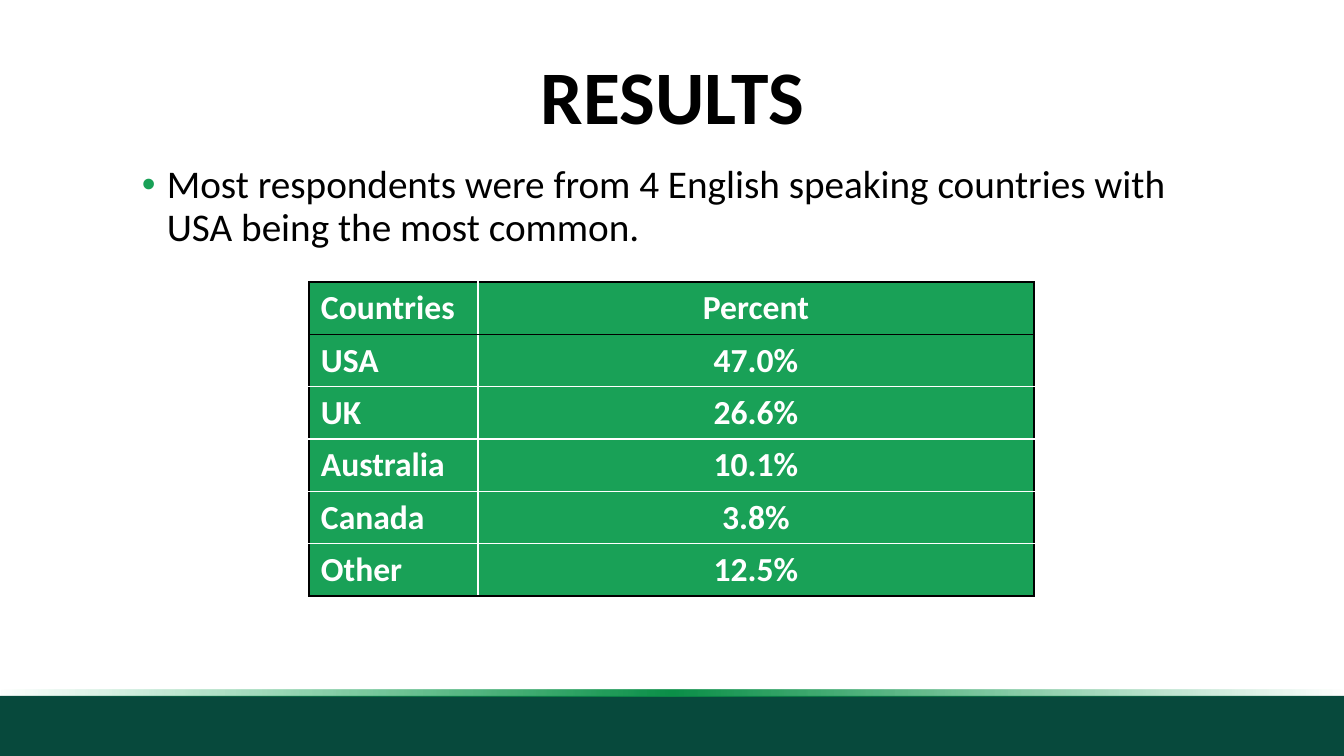
from dataclasses import dataclass

from lxml.etree import SubElement
from pptx import Presentation
from pptx.dml.color import RGBColor
from pptx.enum.shapes import MSO_SHAPE as Shape
from pptx.enum.text import MSO_ANCHOR as Anchor, PP_ALIGN as Align
from pptx.oxml.ns import qn
from pptx.util import Pt

EMU_PER_PX = 914400 / 100.8


def px(length):
    return round(length * EMU_PER_PX)


@dataclass(frozen=True)
class Theme:
    font: str = "Calibri"
    ink: str = "000000"
    paper: str = "FFFFFF"
    green: str = "19A157"
    footer: str = "07493C"
    glow: tuple = ((0, "0D9D4F", 0), (50, "0C9049", 100), (100, "0FAB56", 0))
    title_size: int = 54
    body_size: int = 28
    table_size: int = 24
    line_spacing: float = 0.9


class SlideBuilder:
    """Draws styled elements on the current slide, measured in px."""

    def __init__(self, slide, theme):
        self.slide = slide
        self.theme = theme

    def run(self, paragraph, text, size, color, bold=False):
        run = paragraph.add_run()
        run.text = text
        run.font.name = self.theme.font
        run.font.size = Pt(size)
        run.font.bold = bold
        run.font.color.rgb = RGBColor.from_string(color)

    def band(self, *box):
        band = self.slide.shapes.add_shape(Shape.RECTANGLE, *map(px, box))
        band.shadow.inherit = False
        band.line.fill.background()
        return band

    def solid_band(self, *box, color):
        fill = self.band(*box).fill
        fill.solid()
        fill.fore_color.rgb = RGBColor.from_string(color)

    def glow_band(self, *box, stops):
        glow = self.band(*box)
        glow.fill.gradient()
        glow.fill.gradient_angle = 180
        stop_list = next(glow.element.iter(qn("a:gsLst")))
        for old_stop in list(stop_list):
            stop_list.remove(old_stop)
        for position, color, opacity in stops:
            stop = SubElement(stop_list, qn("a:gs"), pos=str(position * 1000))
            shade = SubElement(stop, qn("a:srgbClr"), val=color)
            SubElement(shade, qn("a:alpha"), val=str(opacity * 1000))

    def text(self, *box, words, size, bold=False, align=Align.LEFT,
             anchor=Anchor.TOP, bullet_indent=0):
        frame = self.slide.shapes.add_textbox(*map(px, box)).text_frame
        frame.word_wrap = True
        frame.vertical_anchor = anchor
        paragraph = frame.paragraphs[0]
        paragraph.alignment = align
        paragraph.line_spacing = self.theme.line_spacing
        if bullet_indent:
            self.bullet(paragraph, bullet_indent)
        self.run(paragraph, words, size, self.theme.ink, bold)

    def bullet(self, paragraph, indent):
        properties = paragraph._p.get_or_add_pPr()
        properties.set("marL", str(px(indent)))
        properties.set("indent", str(-px(indent)))
        color = SubElement(properties, qn("a:buClr"))
        SubElement(color, qn("a:srgbClr"), val=self.theme.green)
        SubElement(properties, qn("a:buFont"), typeface="Arial")
        SubElement(properties, qn("a:buChar"), char="•")

    def borders(self, cell, **sides):
        properties = cell._tc.get_or_add_tcPr()
        for side, color in sides.items():
            line = SubElement(properties, qn(f"a:ln{side}"), w=str(Pt(1)))
            fill = SubElement(line, qn("a:solidFill"))
            SubElement(fill, qn("a:srgbClr"), val=color)

    def table(self, left, top, widths, row_height, rows):
        ink, paper = self.theme.ink, self.theme.paper
        last = len(rows) - 1
        table = self.slide.shapes.add_table(
            len(rows), len(widths), px(left), px(top),
            px(sum(widths)), px(row_height * len(rows))).table
        table.first_row = table.horz_banding = False
        for column, width in zip(table.columns, widths):
            column.width = px(width)
        for r, values in enumerate(rows):
            table.rows[r].height = px(row_height)
            for c, value in enumerate(values):
                cell = table.cell(r, c)
                cell.margin_left = cell.margin_right = px(12)
                cell.margin_top = cell.margin_bottom = px(6)
                self.borders(cell,
                             L=paper if c else ink,
                             R=ink if c else paper,
                             T=ink if r <= 1 else paper,
                             B=ink if r in (0, last) else paper)
                cell.fill.solid()
                cell.fill.fore_color.rgb = RGBColor.from_string(self.theme.green)
                paragraph = cell.text_frame.paragraphs[0]
                paragraph.alignment = Align.CENTER if c else Align.LEFT
                self.run(paragraph, value, self.theme.table_size, paper, True)


def main():
    theme = Theme()
    deck = Presentation()
    deck.slide_width, deck.slide_height = px(1344), px(756)
    results = SlideBuilder(deck.slides.add_slide(deck.slide_layouts[6]), theme)

    results.solid_band(0, 696, 1344, 60, color=theme.footer)
    results.glow_band(0, 690, 1344, 6, stops=theme.glow)
    results.text(93, 40, 1159, 120, words="RESULTS", size=theme.title_size,
                 bold=True, align=Align.CENTER, anchor=Anchor.MIDDLE)
    results.text(132, 160, 1080, 502, size=theme.body_size, bullet_indent=25,
                 words="Most respondents were from 4 English speaking countries "
                       "with USA being the most common.")
    results.table(309, 282, widths=(169, 556), row_height=52, rows=(
        ("Countries", "Percent"),
        ("USA", "47.0%"),
        ("UK", "26.6%"),
        ("Australia", "10.1%"),
        ("Canada", "3.8%"),
        ("Other", "12.5%"),
    ))
    deck.save("out.pptx")


if __name__ == "__main__":
    main()
